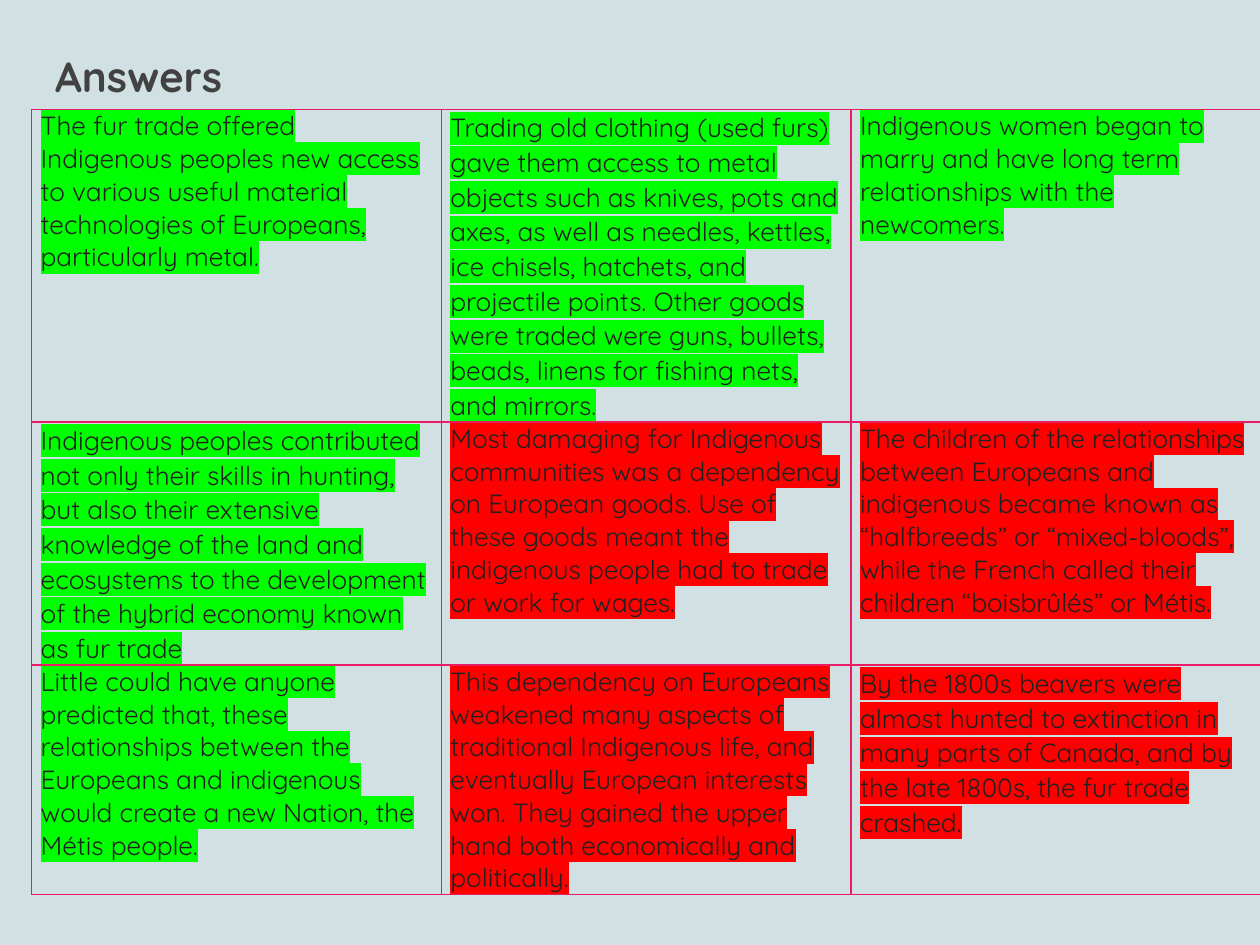
from lxml import etree
from pptx import Presentation
from pptx import util as u
from pptx.dml import color
from pptx.enum import text
from pptx.oxml import ns

FONT = "Quicksand"
GREEN, RED = "00FF00", "FF0000"
BORDER = "E91D63"


def rgb(value):
    return color.RGBColor.from_string(value)


def add_color(parent, tag, value):
    """Append a DrawingML element holding one RGB colour and return it."""
    holder = etree.SubElement(parent, ns.qn(tag))
    etree.SubElement(holder, ns.qn("a:srgbClr"), val=value)
    return holder


# Wording, highlight, and whether the paragraph is loosely spaced
answers = [
    [
        ("The fur trade offered Indigenous peoples new access to various useful "
         "material technologies of Europeans, particularly metal.", GREEN, False),
        ("Trading old clothing (used furs) gave them access to metal objects such as "
         "knives, pots and axes, as well as needles, kettles, ice chisels, hatchets, "
         "and projectile points. Other goods were traded were guns, bullets, beads, "
         "linens for fishing nets, and mirrors.", GREEN, True),
        ("Indigenous women began to marry and have long term relationships with the "
         "newcomers.", GREEN, False),
    ],
    [
        ("Indigenous peoples contributed not only their skills in hunting, but also "
         "their extensive knowledge of the land and ecosystems to the development of "
         "the hybrid economy known as fur trade", GREEN, True),
        ("Most damaging for Indigenous communities was a dependency on European goods. "
         "Use of these goods meant the indigenous people had to trade or work for "
         "wages.", RED, False),
        ("The children of the relationships between Europeans and indigenous became "
         "known as “halfbreeds” or “mixed-bloods”, while the French called their "
         "children “boisbrûlés” or Métis.", RED, False),
    ],
    [
        ("Little could have anyone predicted that, these relationships between the "
         "Europeans and indigenous would create a new Nation, the Métis people.",
         GREEN, False),
        ("This dependency on Europeans weakened many aspects of traditional Indigenous "
         "life, and eventually European interests won. They gained the upper hand both "
         "economically and politically.", RED, False),
        ("By the 1800s beavers were almost hunted to extinction in many parts of "
         "Canada, and by the late 1800s, the fur trade crashed.", RED, True),
    ],
]
row_heights = [6.3, 4.9, 4.62]
column_width = 8.26

deck = Presentation()
deck.slide_width, deck.slide_height = u.Cm(25.4), u.Cm(19.05)
slide = deck.slides.add_slide(deck.slide_layouts[6])
slide.background.fill.solid()
slide.background.fill.fore_color.rgb = rgb("D0E0E3")

heading = slide.shapes.add_textbox(u.Cm(0.86), u.Cm(0.99), u.Cm(7.8), u.Cm(1.3)).text_frame
heading.word_wrap = True
heading.vertical_anchor = text.MSO_ANCHOR.BOTTOM
heading.margin_left = heading.margin_right = u.Cm(0.25)
heading.margin_top = heading.margin_bottom = u.Cm(0.25)
title = heading.paragraphs[0].add_run()
title.text = "Answers"
title.font.name, title.font.size, title.font.bold = FONT, u.Pt(24), True
title.font.color.rgb = rgb("424242")

grid = slide.shapes.add_table(
    3, 3, u.Cm(0.64), u.Cm(2.21), u.Cm(3 * column_width), u.Cm(sum(row_heights))
).table
grid.first_row = grid.horz_banding = False
for column in grid.columns:
    column.width = u.Cm(column_width)

for row, height, row_answers in zip(grid.rows, row_heights, answers):
    row.height = u.Cm(height)
    for cell, (wording, highlight, loose) in zip(row.cells, row_answers):
        cell.margin_left = cell.margin_right = u.Cm(0.18)
        cell.margin_top = cell.margin_bottom = 0
        # Borders must come before the fill in the cell properties
        properties = cell._tc.get_or_add_tcPr()
        for side in ("a:lnL", "a:lnR", "a:lnT", "a:lnB"):
            edge = etree.SubElement(properties, ns.qn(side), w=str(u.Pt(1)))
            add_color(edge, "a:solidFill", BORDER)
        cell.fill.background()

        paragraph = cell.text_frame.paragraphs[0]
        if loose:
            paragraph.line_spacing = 1.06
            paragraph.space_after = u.Pt(8)
        answer = paragraph.add_run()
        answer.text = wording
        answer.font.size = u.Pt(15)
        answer.font.color.rgb = rgb("212121")
        # The highlight sits between the text colour and the font name
        add_color(answer.font._element, "a:highlight", highlight)
        answer.font.name = FONT

deck.save("out.pptx")
